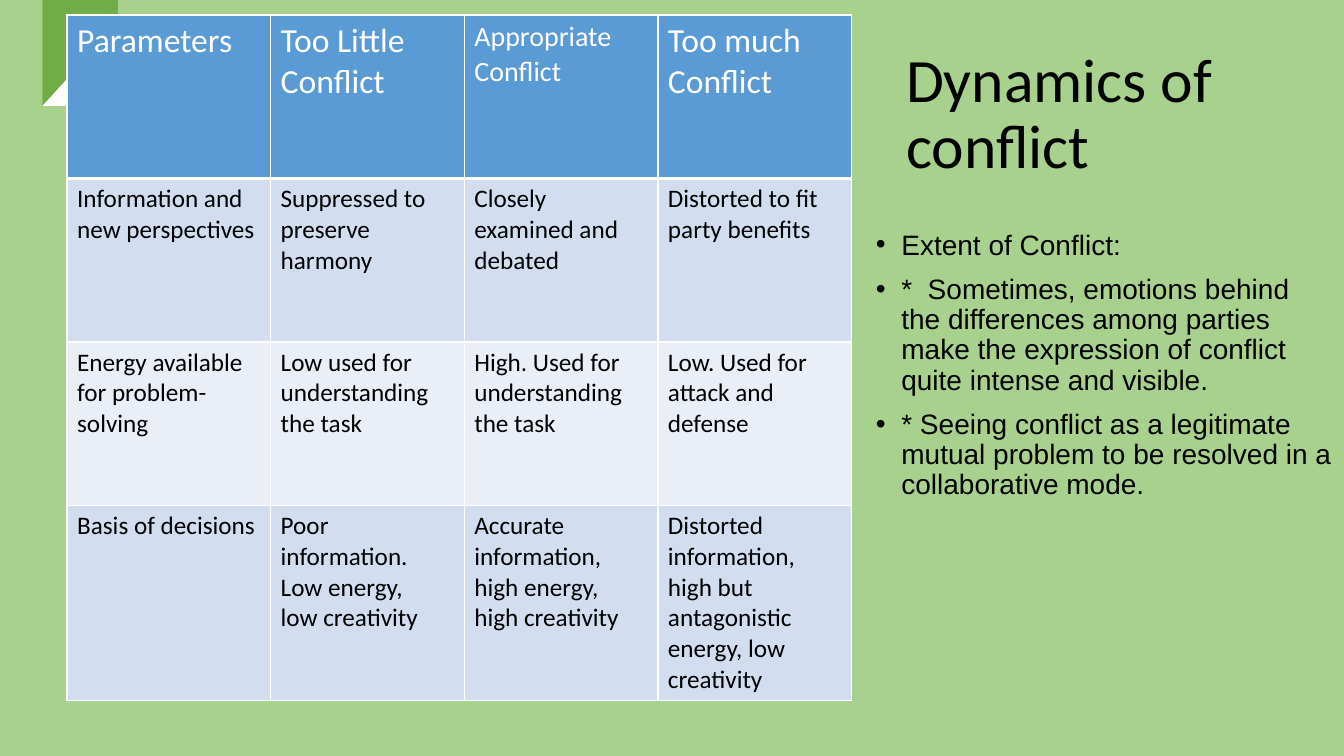
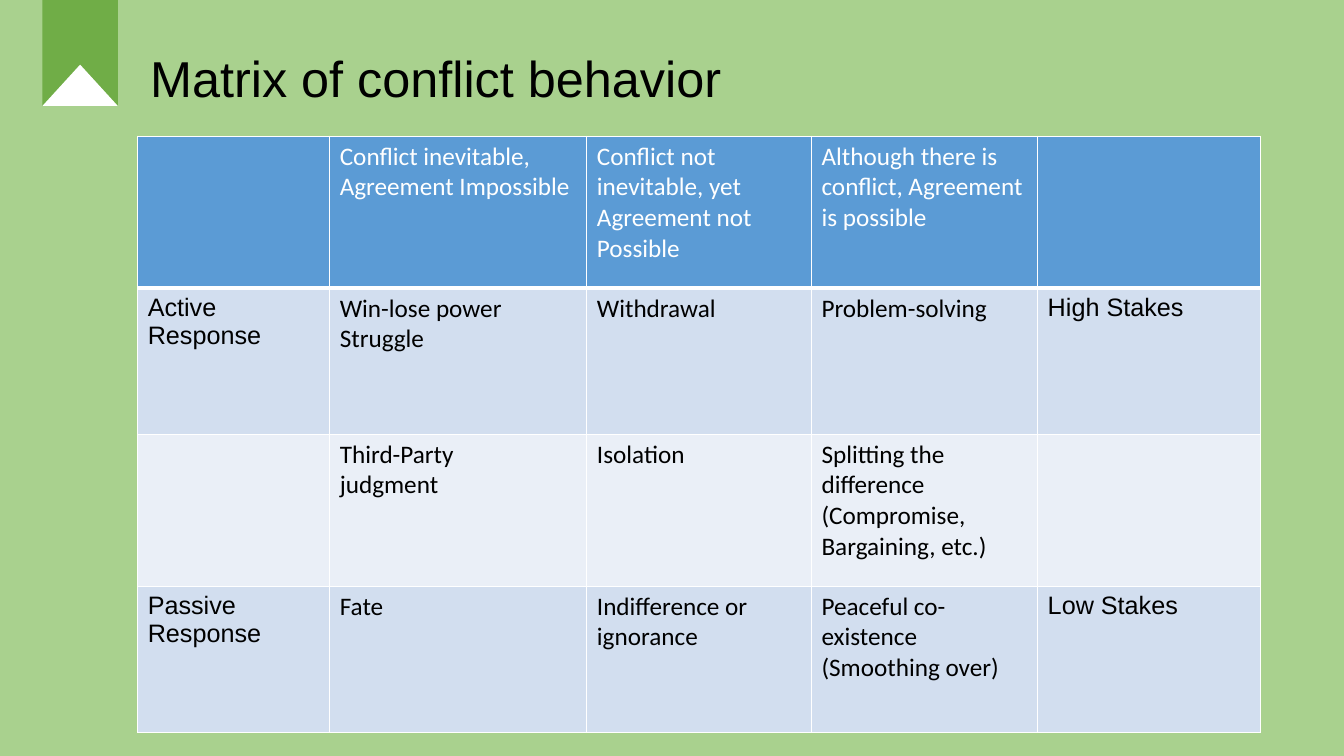
from lxml import etree
from pptx import Presentation
from pptx.dml.color import RGBColor
from pptx.enum.shapes import MSO_SHAPE as Shape
from pptx.enum.text import MSO_ANCHOR as Anchor, MSO_AUTO_SIZE as AutoSize, PP_ALIGN as Align
from pptx.oxml.ns import qn
from pptx.util import Cm, Pt

# Palette
PALE_GREEN, GREEN = "A9D18E", "70AD47"
HEADER_BLUE, BAND_DARK, BAND_LIGHT = "5B9BD5", "D2DEEF", "EAEFF7"
WHITE, BLACK = "FFFFFF", "000000"

TITLE_AND_BODY, TITLE_ONLY = 1, 5


def color(value):
    return RGBColor.from_string(value)


def format_paragraph(paragraph, font_name, size, ink):
    font = paragraph.font
    font.name, font.size, font.bold = font_name, Pt(size), False
    font.color.rgb = color(ink)


def add_borders(cell, bottom_width):
    properties = cell._tc.get_or_add_tcPr()
    for side, width in (("lnL", 1), ("lnR", 1), ("lnT", 1), ("lnB", bottom_width)):
        line = etree.SubElement(properties, qn(f"a:{side}"), w=str(Pt(width)))
        fill = etree.SubElement(line, qn("a:solidFill"))
        etree.SubElement(fill, qn("a:srgbClr"), val=WHITE)


class Deck:
    """Holds the shared style and the slide being built."""

    def __init__(self):
        self.presentation = Presentation()
        self.presentation.slide_width = Cm(33.87)
        self.presentation.slide_height = Cm(19.05)
        background = self.presentation.slide_master.background.fill
        background.solid()
        background.fore_color.rgb = color(PALE_GREEN)
        self.slide = None

    def new_slide(self, layout):
        layouts = self.presentation.slide_layouts
        self.slide = self.presentation.slides.add_slide(layouts[layout])
        self.ribbon()

    def ribbon(self):
        group = self.slide.shapes.add_group_shape()
        for kind, top, height, fill in ((Shape.RECTANGLE, 0, 2.67, GREEN),
                                        (Shape.ISOSCELES_TRIANGLE, 1.63, 1.04, WHITE)):
            shape = group.shapes.add_shape(kind, Cm(1.07), Cm(top), Cm(1.9), Cm(height))
            shape.shadow.inherit = False
            shape.fill.solid()
            shape.fill.fore_color.rgb = color(fill)
            shape.line.fill.background()

    def place(self, placeholder, box, anchor):
        placeholder.left, placeholder.top, placeholder.width, placeholder.height = map(Cm, box)
        frame = placeholder.text_frame
        frame.word_wrap = True
        frame.auto_size = AutoSize.NONE
        frame.vertical_anchor = anchor
        return frame

    def title(self, text, box, font_name, size):
        frame = self.place(self.slide.shapes.title, box, Anchor.MIDDLE)
        frame.text = text
        paragraph = frame.paragraphs[0]
        paragraph.alignment = Align.LEFT
        paragraph.line_spacing = 0.9
        format_paragraph(paragraph, font_name, size, BLACK)

    def bullets(self, items, box):
        frame = self.place(self.slide.placeholders[1], box, Anchor.TOP)
        frame.text = "\n".join(items)
        for paragraph in frame.paragraphs:
            paragraph.line_spacing = 0.9
            paragraph.space_before = Pt(10)
            format_paragraph(paragraph, "Arial", 20, BLACK)
            indent = Cm(0.64)
            properties = paragraph._p.get_or_add_pPr()
            properties.set("marL", str(indent))
            properties.set("indent", str(-indent))

    def table(self, rows, left, top, widths, heights, header_sizes, arial_columns=()):
        frame = self.slide.shapes.add_table(len(rows), len(widths), Cm(left), Cm(top),
                                            Cm(sum(widths)), Cm(sum(heights)))
        table = frame.table
        table.first_row = table.horz_banding = False
        for column, width in zip(table.columns, widths):
            column.width = Cm(width)
        for row, height in zip(table.rows, heights):
            row.height = Cm(height)
        for row_index, texts in enumerate(rows):
            is_header = row_index == 0
            band = BAND_DARK if row_index % 2 else BAND_LIGHT
            for column_index, text in enumerate(texts):
                cell = table.cell(row_index, column_index)
                cell.text = text
                add_borders(cell, 3 if is_header else 1)
                cell.fill.solid()
                cell.fill.fore_color.rgb = color(HEADER_BLUE if is_header else band)
                use_arial = column_index in arial_columns and not is_header
                for paragraph in cell.text_frame.paragraphs:
                    format_paragraph(paragraph, "Arial" if use_arial else "Calibri",
                                     header_sizes[column_index] if is_header else 18,
                                     WHITE if is_header else BLACK)


def main():
    deck = Deck()

    # Dynamics of conflict
    deck.new_slide(TITLE_AND_BODY)
    deck.title("Dynamics of conflict", (22.58, 1.02, 10.52, 3.78), "Calibri", 44)
    deck.bullets([
        "Extent of Conflict:",
        "*  Sometimes, emotions behind the differences among parties make the "
        "expression of conflict quite intense and visible.",
        "* Seeing conflict as a legitimate mutual problem to be resolved in a "
        "collaborative mode.",
    ], (21.82, 5.69, 12.04, 11.56))
    deck.table([
        ["Parameters", "Too Little Conflict", "Appropriate\nConflict", "Too much Conflict"],
        ["Information and new perspectives", "Suppressed to preserve harmony",
         "Closely examined and debated", "Distorted to fit party benefits"],
        ["Energy available for problem-solving", "Low used for understanding the task",
         "High. Used for understanding the task", "Low. Used for attack and defense"],
        ["Basis of decisions", "Poor information.\nLow energy,\nlow creativity",
         "Accurate information,\nhigh energy,\nhigh creativity",
         "Distorted information, high but antagonistic energy, low creativity"],
    ], 1.69, 0.38, [5.13] + [4.88] * 3, [4.12] * 4, header_sizes=[24, 24, 20, 24])

    # Matrix of conflict behavior
    deck.new_slide(TITLE_ONLY)
    deck.title("Matrix of conflict behavior", (3.53, -0.03, 28.27, 4.14), "Arial", 36)
    deck.table([
        ["", "Conflict inevitable,\nAgreement Impossible",
         "Conflict not inevitable, yet Agreement not Possible",
         "Although there is conflict, Agreement is possible", ""],
        ["Active Response", "Win-lose power\nStruggle", "Withdrawal", "Problem-solving",
         "High Stakes"],
        ["", "Third-Party\njudgment", "Isolation",
         "Splitting the difference (Compromise, Bargaining, etc.)", ""],
        ["Passive Response", "Fate", "Indifference or\nignorance",
         "Peaceful co-existence\n(Smoothing over)", "Low Stakes"],
    ], 3.47, 3.43, [4.84, 6.48, 5.66, 5.7, 5.61], [3.83, 3.68] * 2,
        header_sizes=[18] * 5, arial_columns=(0, 4))

    deck.presentation.save("out.pptx")


if __name__ == "__main__":
    main()
